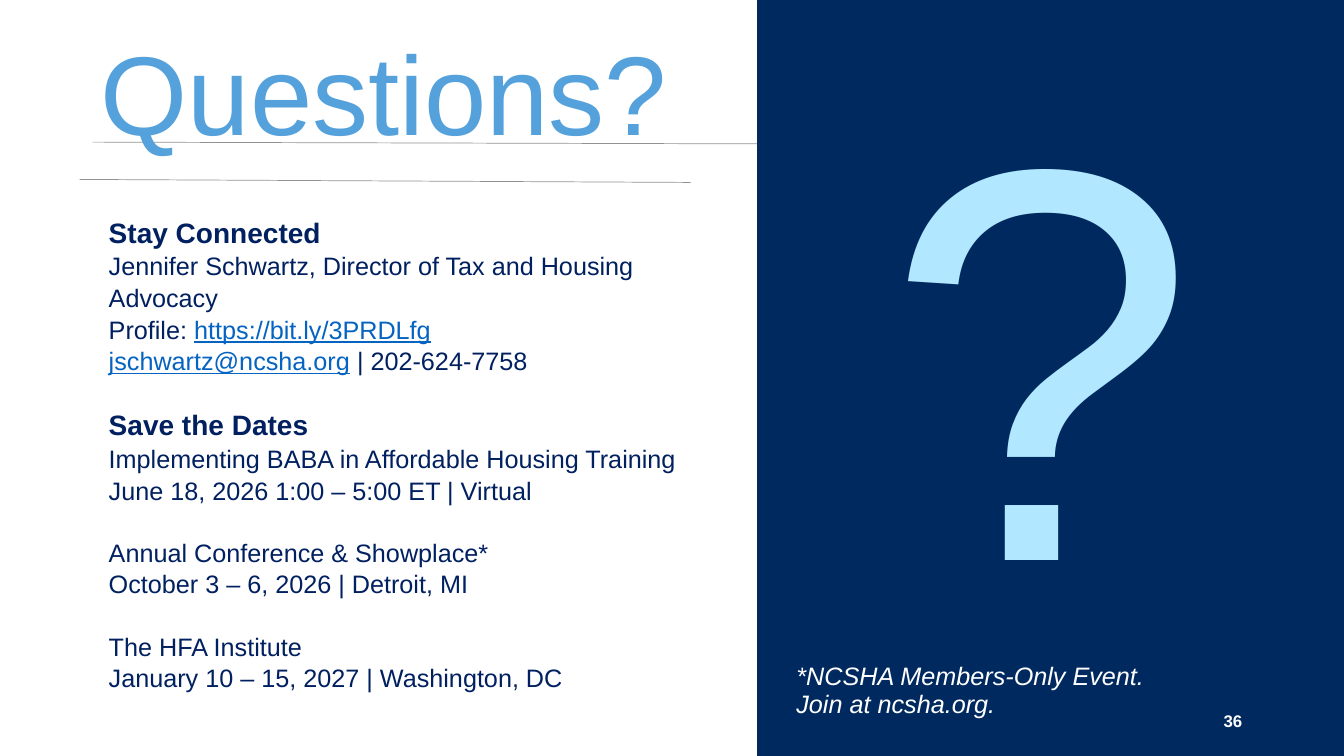
from lxml import etree
from pptx import Presentation
from pptx.dml.color import RGBColor
from pptx.enum import shapes, text
from pptx.oxml.ns import qn
from pptx.util import Inches, Pt

FONT = "Arial"
NAVY, INK, WHITE = "002A5F", "002060", "FFFFFF"
TITLE_BLUE, PALE_BLUE, LINK_BLUE, GRAY = "54A1DC", "B2E8FF", "0563C1", "929292"
BLANK_LINE = 21.7  # points between groups of details

# Each group holds lines, each line holds (text, style) runs
DETAILS = [
    [
        [("Stay Connected", "heading")],
        [("Jennifer Schwartz, Director of Tax and Housing Advocacy", "plain")],
        [("Profile: ", "plain"), ("https://bit.ly/3PRDLfg", "link")],
        [("jschwartz@ncsha.org", "link"), (" | 202-624-7758", "plain")],
    ],
    [
        [("Save the Dates", "heading")],
        [("Implementing BABA in Affordable Housing Training", "plain")],
        [("June 18, 2026 1:00 – 5:00 ET | Virtual", "plain")],
    ],
    [
        [("Annual Conference & Showplace*", "plain")],
        [("October 3 – 6, 2026 | Detroit, MI", "plain")],
    ],
    [
        [("The HFA Institute", "plain")],
        [("January 10 – 15, 2027 | Washington, DC", "plain")],
    ],
]
STYLES = {
    "heading": dict(size=20, color=INK, bold=True),
    "plain": dict(size=18, color=INK),
    "link": dict(size=18, color=LINK_BLUE, underline=True),
}


def rgb(value):
    return RGBColor.from_string(value)


def add_run(paragraph, words, size, color, bold=False, italic=False, underline=False):
    run = paragraph.add_run()
    run.text = words
    font = run.font
    font.name, font.size = FONT, Pt(size)
    font.color.rgb = rgb(color)
    font.bold, font.italic, font.underline = bold, italic, underline


def add_text_box(slide, left, top, width, height, anchor=text.MSO_ANCHOR.TOP):
    box = slide.shapes.add_textbox(Inches(left), Inches(top), Inches(width), Inches(height))
    box.text_frame.word_wrap = True
    box.text_frame.vertical_anchor = anchor
    return box.text_frame


def add_rule(slide, left, top, right, bottom):
    rule = slide.shapes.add_connector(
        shapes.MSO_CONNECTOR.STRAIGHT, Inches(left), Inches(top), Inches(right), Inches(bottom))
    rule.line.color.rgb = rgb(GRAY)
    rule.line.width = Pt(0.5)
    etree.SubElement(rule._element.spPr, qn("a:effectLst"))


def add_title(slide, left, top, width, height):
    # Rules lie behind and below the title
    add_rule(slide, left + 0.02, top + 1.13, 12.35, top + 1.16)
    title = slide.shapes.title
    slide.shapes._spTree.append(title._element)
    title.left, title.top = Inches(left), Inches(top)
    title.width, title.height = Inches(width), Inches(height)
    frame = title.text_frame
    frame.word_wrap = True
    frame.auto_size = text.MSO_AUTO_SIZE.NONE
    frame.vertical_anchor = text.MSO_ANCHOR.MIDDLE
    paragraph = frame.paragraphs[0]
    paragraph.alignment = text.PP_ALIGN.LEFT
    add_run(paragraph, "Questions?", 80, TITLE_BLUE)
    add_rule(slide, left - 0.11, top + 1.5, left + 5.95, top + 1.53)


def add_details(slide, left, top, width, height):
    frame = add_text_box(slide, left, top, width, height)
    paragraph = None
    for group_index, group in enumerate(DETAILS):
        for line_index, line in enumerate(group):
            paragraph = frame.add_paragraph() if paragraph else frame.paragraphs[0]
            paragraph.line_spacing = 1.05
            if group_index and not line_index:
                paragraph.space_before = Pt(BLANK_LINE)
            for words, style in line:
                add_run(paragraph, words, **STYLES[style])


def add_side_panel(slide, left, top, width, height):
    panel = slide.shapes.add_shape(
        shapes.MSO_SHAPE.RECTANGLE, Inches(left), Inches(top), Inches(width), Inches(height))
    panel.shadow.inherit = False
    panel.fill.solid()
    panel.fill.fore_color.rgb = rgb(NAVY)
    panel.line.fill.background()

    # Large question mark
    mark = add_text_box(slide, left + 1.17, top + 0.71, 3.48, 4.72).paragraphs[0]
    mark.line_spacing = 0.9
    add_run(mark, "?", 400, PALE_BLUE)

    # Footnote
    note = add_text_box(slide, left + 0.29, top + 6.54, 3.69, 0.59).paragraphs[0]
    note.line_spacing = 0.9
    add_run(note, "*NCSHA Members-Only Event. Join at ncsha.org.", 18, WHITE, italic=True)

    # Slide number
    number = add_text_box(
        slide, left + 1.91, top + 6.95, 3, 0.4, text.MSO_ANCHOR.MIDDLE).paragraphs[0]
    number.alignment = text.PP_ALIGN.RIGHT
    add_run(number, "36", 12, WHITE, bold=True)


def main():
    presentation = Presentation()
    presentation.slide_width, presentation.slide_height = Inches(13.33), Inches(7.5)
    slide = presentation.slides.add_slide(presentation.slide_layouts[5])
    add_title(slide, 0.9, 0.28, 5.83, 1.24)
    add_side_panel(slide, 7.51, 0, 5.82, 7.5)
    add_details(slide, 0.98, 2.07, 6.09, 4.71)
    presentation.save("out.pptx")


if __name__ == "__main__":
    main()
